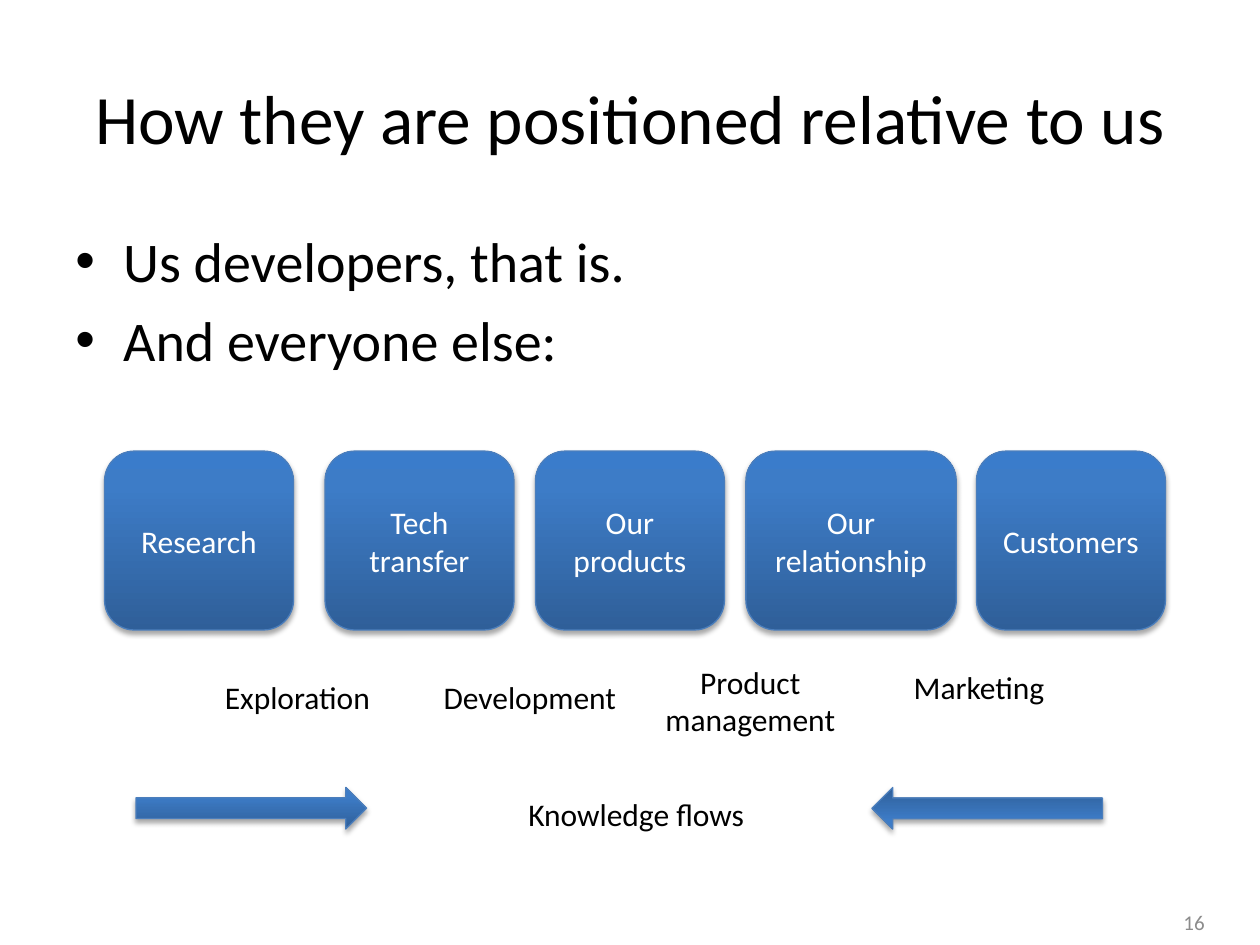
from dataclasses import dataclass

from lxml import etree
from pptx import Presentation
from pptx.dml.color import RGBColor
from pptx.enum.shapes import MSO_SHAPE
from pptx.enum.text import MSO_ANCHOR, PP_ALIGN
from pptx.oxml.ns import qn
from pptx.util import Inches, Pt

ROUNDED_BOX, ARROW = MSO_SHAPE.ROUNDED_RECTANGLE, MSO_SHAPE.RIGHT_ARROW
LEFT, CENTER, RIGHT = PP_ALIGN.LEFT, PP_ALIGN.CENTER, PP_ALIGN.RIGHT
TOP, MIDDLE = MSO_ANCHOR.TOP, MSO_ANCHOR.MIDDLE


@dataclass(frozen=True)
class Theme:
    font: str = "Calibri"
    text: str = "000000"
    light_text: str = "FFFFFF"
    muted_text: str = "8C8C8C"
    outline: str = "4B7EBC"
    shadow: str = "000000"
    gradient: tuple = ((0, "2F5F99"), (80, "3D7CC7"), (100, "3A7CCB"))
    title_size: float = 39.6
    body_size: float = 32
    label_size: float = 18
    number_size: float = 12


THEME = Theme()

# Label, left, width
STAGES = (
    ("Research", 0.83, 1.5),
    ("Tech transfer", 2.58, 1.5),
    ("Our products", 4.25, 1.5),
    ("Our relationship", 5.92, 1.67),
    ("Customers", 7.75, 1.5),
)
# Lines, left, top, width, height
LABELS = (
    (["Exploration"], 1.67, 5.33, 1.38, 0.4),
    (["Development"], 3.41, 5.33, 1.59, 0.4),
    (["Product", "management"], 5.17, 5.21, 1.57, 0.71),
    (["Marketing"], 7.14, 5.25, 1.26, 0.4),
    (["Knowledge flows"], 4.08, 6.26, 1.94, 0.4),
)
# Left, rotation
FLOW_ARROWS = ((1.08, 0), (6.92, 180))


def write_lines(text_frame, lines, size, color, alignment):
    for index, line in enumerate(lines):
        paragraph = text_frame.paragraphs[0] if index == 0 else text_frame.add_paragraph()
        paragraph.text = line
        paragraph.alignment = alignment
        paragraph.font.name = THEME.font
        paragraph.font.size = Pt(size)
        paragraph.font.color.rgb = RGBColor.from_string(color)


def add_text(slide, lines, box, size, color=THEME.text, alignment=LEFT, anchor=TOP, wrap=True):
    text_frame = slide.shapes.add_textbox(*map(Inches, box)).text_frame
    text_frame.word_wrap = wrap
    text_frame.vertical_anchor = anchor
    write_lines(text_frame, lines, size, color, alignment)
    return text_frame


def add_bullets(slide, lines, box):
    text_frame = add_text(slide, lines, box, THEME.body_size)
    for paragraph in text_frame.paragraphs:
        paragraph.space_before = Pt(0.2 * THEME.body_size)
        properties = paragraph._p.get_or_add_pPr()
        properties.set("marL", str(Inches(0.38)))
        properties.set("indent", str(-Inches(0.38)))
        font = etree.Element(qn("a:buFont"), typeface="Arial")
        bullet = etree.Element(qn("a:buChar"), char="•")
        position = 1 + properties.index(properties.find(qn("a:spcBef")))
        properties[position:position] = [font, bullet]


def set_gradient(shape):
    shape.fill.gradient()
    shape.fill.gradient_angle = 90
    stops = shape._element.spPr.find(f".//{qn('a:gsLst')}")
    for stop in list(stops):
        stops.remove(stop)
    for position, color in THEME.gradient:
        stop = etree.SubElement(stops, qn("a:gs"), pos=str(position * 1000))
        etree.SubElement(stop, qn("a:srgbClr"), val=color)


def set_shadow(shape):
    shape.shadow.inherit = False
    effects = shape._element.spPr.find(qn("a:effectLst"))
    shadow = etree.SubElement(
        effects, qn("a:outerShdw"), blurRad=str(Pt(3.1)), dist=str(Pt(1.8)),
        dir="5400000", rotWithShape="0",
    )
    color = etree.SubElement(shadow, qn("a:srgbClr"), val=THEME.shadow)
    etree.SubElement(color, qn("a:alpha"), val="35000")


def add_glossy_shape(slide, kind, box):
    shape = slide.shapes.add_shape(kind, *map(Inches, box))
    set_gradient(shape)
    shape.line.color.rgb = RGBColor.from_string(THEME.outline)
    shape.line.width = Pt(0.75)
    set_shadow(shape)
    return shape


def add_stage(slide, label, left, width):
    shape = add_glossy_shape(slide, ROUNDED_BOX, (left, 3.58, width, 1.42))
    shape.text_frame.vertical_anchor = MIDDLE
    write_lines(shape.text_frame, [label], THEME.label_size, THEME.light_text, CENTER)


def main():
    presentation = Presentation()
    presentation.slide_width, presentation.slide_height = Inches(10), Inches(7.5)
    slide = presentation.slides.add_slide(presentation.slide_layouts[6])

    add_text(slide, ["16"], (7.33, 7.12, 2.33, 0.4), THEME.number_size,
             THEME.muted_text, RIGHT, MIDDLE)
    add_text(slide, ["How they are positioned relative to us"], (0.5, 0.3, 9, 1.25),
             THEME.title_size, alignment=CENTER, anchor=MIDDLE)
    add_bullets(slide, ["Us developers, that is.", "And everyone else:"], (0.5, 1.75, 9, 4.95))

    for label, left, width in STAGES:
        add_stage(slide, label, left, width)
    for lines, *box in LABELS:
        add_text(slide, lines, box, THEME.label_size, alignment=CENTER, wrap=False)
    for left, rotation in FLOW_ARROWS:
        arrow = add_glossy_shape(slide, ARROW, (left, 6.25, 1.83, 0.33))
        arrow.rotation = rotation

    presentation.save("out.pptx")


if __name__ == "__main__":
    main()
